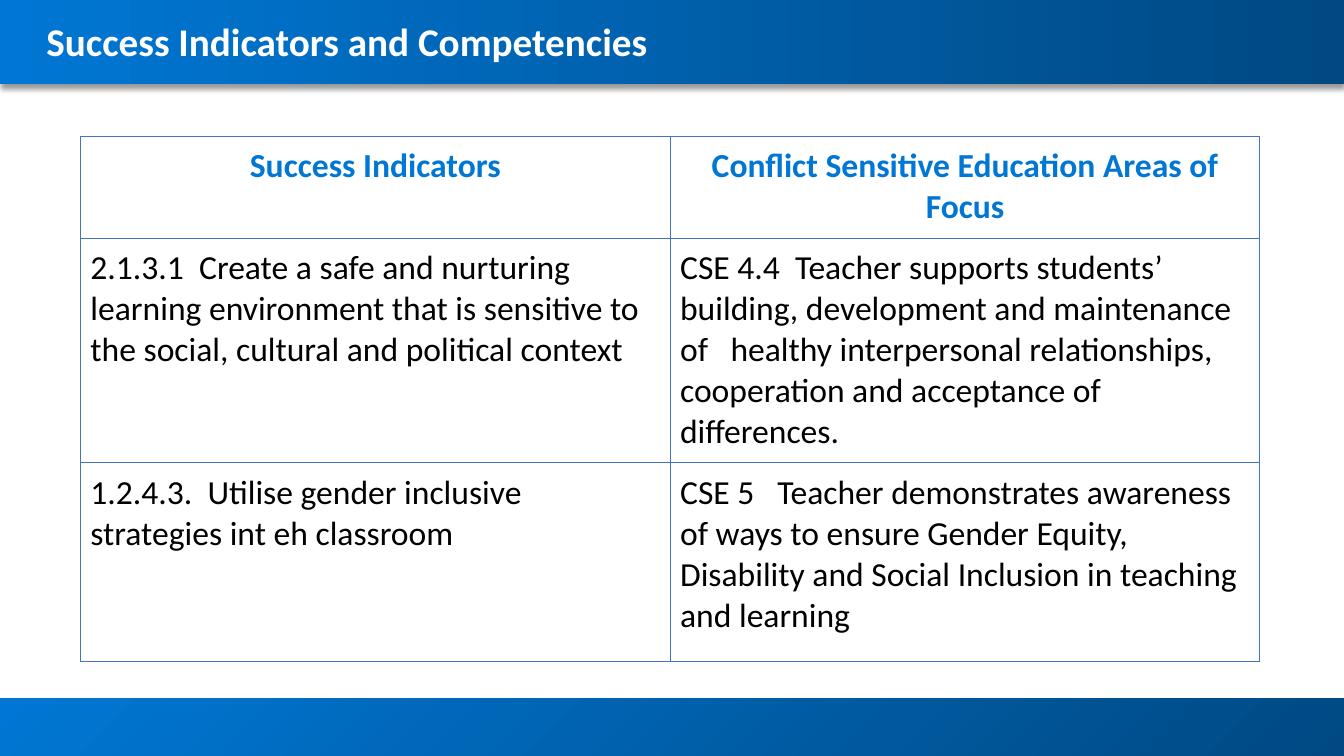
from dataclasses import dataclass

from lxml.etree import SubElement
from pptx import Presentation
from pptx.dml.color import RGBColor
from pptx.enum.shapes import MSO_SHAPE
from pptx.enum.text import MSO_ANCHOR, PP_ALIGN
from pptx.oxml import parse_xml
from pptx.oxml.ns import nsdecls, qn
from pptx.util import Cm, Pt


@dataclass(frozen=True)
class Theme:
    font: str = "Calibri"
    light: str = "0077D4"
    dark: str = "004983"
    white: str = "FFFFFF"
    black: str = "000000"
    rule: str = "4472C4"
    head: int = 28
    body: int = 24
    line: float = 0.75


THEME = Theme()
WIDTH, HEIGHT = Cm(33.87), Cm(19.05)
ROWS = [
    ("Success Indicators", "Conflict Sensitive Education Areas of Focus"),
    (
        "2.1.3.1  Create a safe and nurturing learning environment that is "
        "sensitive to the social, cultural and political context",
        "CSE 4.4  Teacher supports students’ building, development and "
        "maintenance of \thealthy interpersonal relationships, cooperation "
        "and acceptance of differences.",
    ),
    (
        "1.2.4.3.  Utilise gender inclusive strategies int eh classroom",
        "CSE 5   Teacher demonstrates awareness of ways to ensure Gender "
        "Equity, Disability and Social Inclusion in teaching and learning",
    ),
]


def style(para, size, color, bold):
    for run in para.runs:
        font = run.font
        font.name, font.size, font.bold = THEME.font, Pt(size), bold
        font.color.rgb = RGBColor.from_string(color)


def add_bar(slide, top, height, angle):
    bar = slide.shapes.add_shape(MSO_SHAPE.RECTANGLE, 0, top, WIDTH, height)
    bar.shadow.inherit = False
    bar.line.fill.background()
    bar.fill.gradient()
    bar.fill.gradient_angle = angle
    for stop, color in zip(bar.fill.gradient_stops, (THEME.light, THEME.dark)):
        stop.color.rgb = RGBColor.from_string(color)
    return bar


def add_shade(bar):
    effects = bar.element.spPr.find(qn("a:effectLst"))
    effects.append(parse_xml(
        f'<a:outerShdw {nsdecls("a")} blurRad="{Pt(4)}" dist="{Pt(3)}" '
        f'dir="5400000" algn="t" rotWithShape="0"><a:srgbClr '
        f'val="{THEME.black}"><a:alpha val="40000"/></a:srgbClr></a:outerShdw>'
    ))


def set_title(slide, text):
    title = slide.shapes.title
    title.left, title.top = Cm(1.17), Cm(0.43)
    title.width, title.height = Cm(31.52), Cm(1.27)
    frame = title.text_frame
    frame.text = text
    frame.vertical_anchor = MSO_ANCHOR.MIDDLE
    frame.margin_left = frame.margin_right = 0
    frame.margin_top = frame.margin_bottom = 0
    para = frame.paragraphs[0]
    para.alignment, para.line_spacing = PP_ALIGN.LEFT, 0.99
    style(para, THEME.head, THEME.white, True)
    # Bring the title in front of the bars
    title.element.getparent().append(title.element)


def set_edges(cell):
    props = cell._tc.get_or_add_tcPr()
    for side in ("lnL", "lnR", "lnT", "lnB"):
        line = SubElement(props, qn(f"a:{side}"), w=str(Pt(THEME.line)))
        fill = SubElement(line, qn("a:solidFill"))
        SubElement(fill, qn("a:srgbClr"), val=THEME.rule)


def fill_cell(cell, text, head):
    set_edges(cell)
    cell.fill.background()
    cell.margin_left = cell.margin_right = Cm(0.25)
    cell.margin_top = cell.margin_bottom = Cm(0.25)
    cell.vertical_anchor = MSO_ANCHOR.TOP
    cell.text_frame.text = text
    para = cell.text_frame.paragraphs[0]
    para.alignment = PP_ALIGN.CENTER if head else PP_ALIGN.LEFT
    style(para, THEME.body, THEME.light if head else THEME.black, head)


def add_grid(slide, rows):
    wide, tall = Cm(14.86), (Cm(1.68), Cm(3.89), Cm(5))
    grid = slide.shapes.add_table(
        len(rows), 2, Cm(2.03), Cm(3.43), 2 * wide, sum(tall)
    ).table
    grid.horz_banding = False
    for col in grid.columns:
        col.width = wide
    for num, (row, texts) in enumerate(zip(grid.rows, rows)):
        row.height = tall[num]
        for cell, text in zip(row.cells, texts):
            fill_cell(cell, text, num == 0)


def main():
    deck = Presentation()
    deck.slide_width, deck.slide_height = WIDTH, HEIGHT
    slide = deck.slides.add_slide(deck.slide_layouts[5])

    # Footer and header bars
    foot = Cm(1.45)
    add_bar(slide, HEIGHT - foot, foot, 315)
    add_shade(add_bar(slide, 0, Cm(2.11), 0))

    # Title and table
    set_title(slide, "Success Indicators and Competencies")
    add_grid(slide, ROWS)
    deck.save("out.pptx")


if __name__ == "__main__":
    main()
